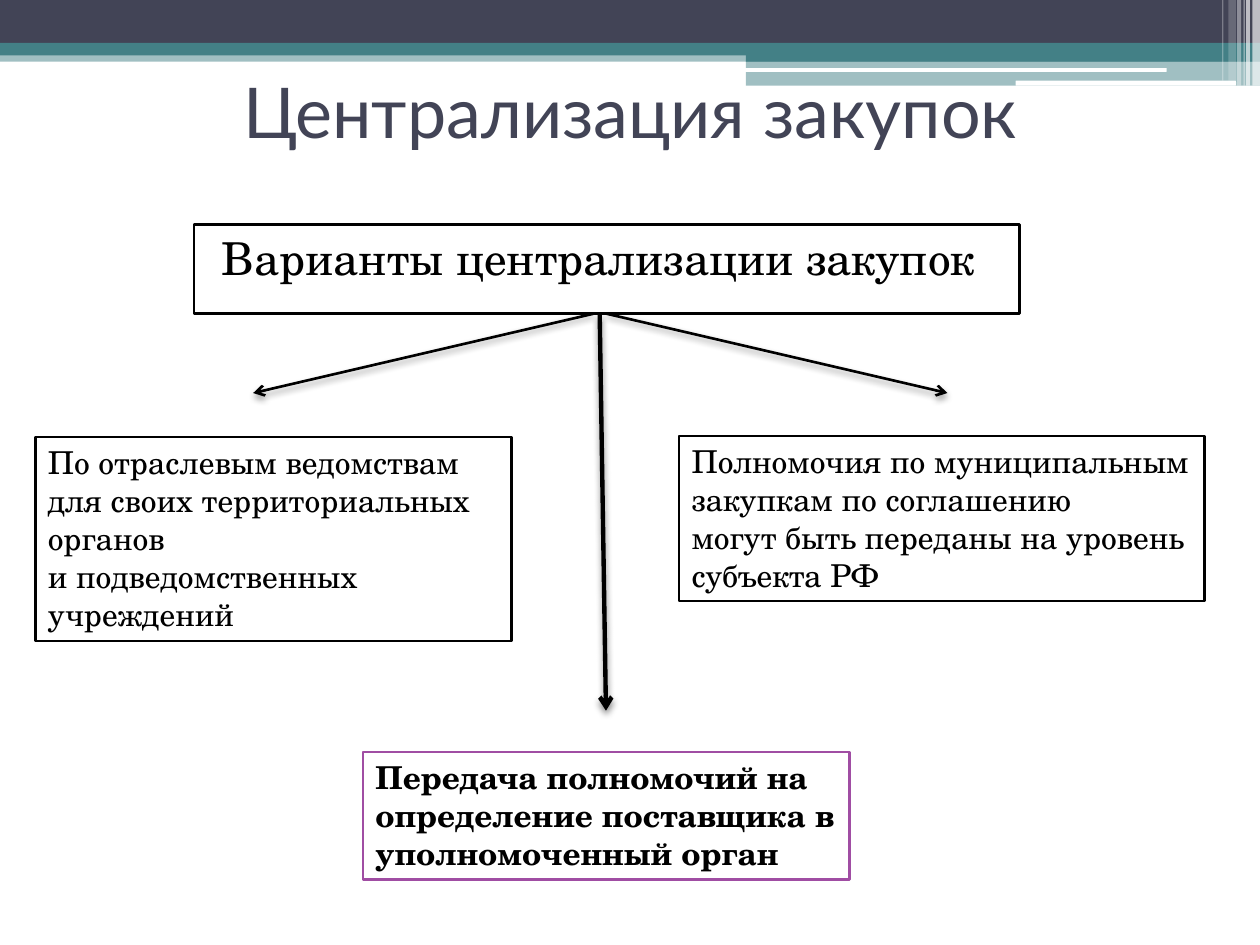
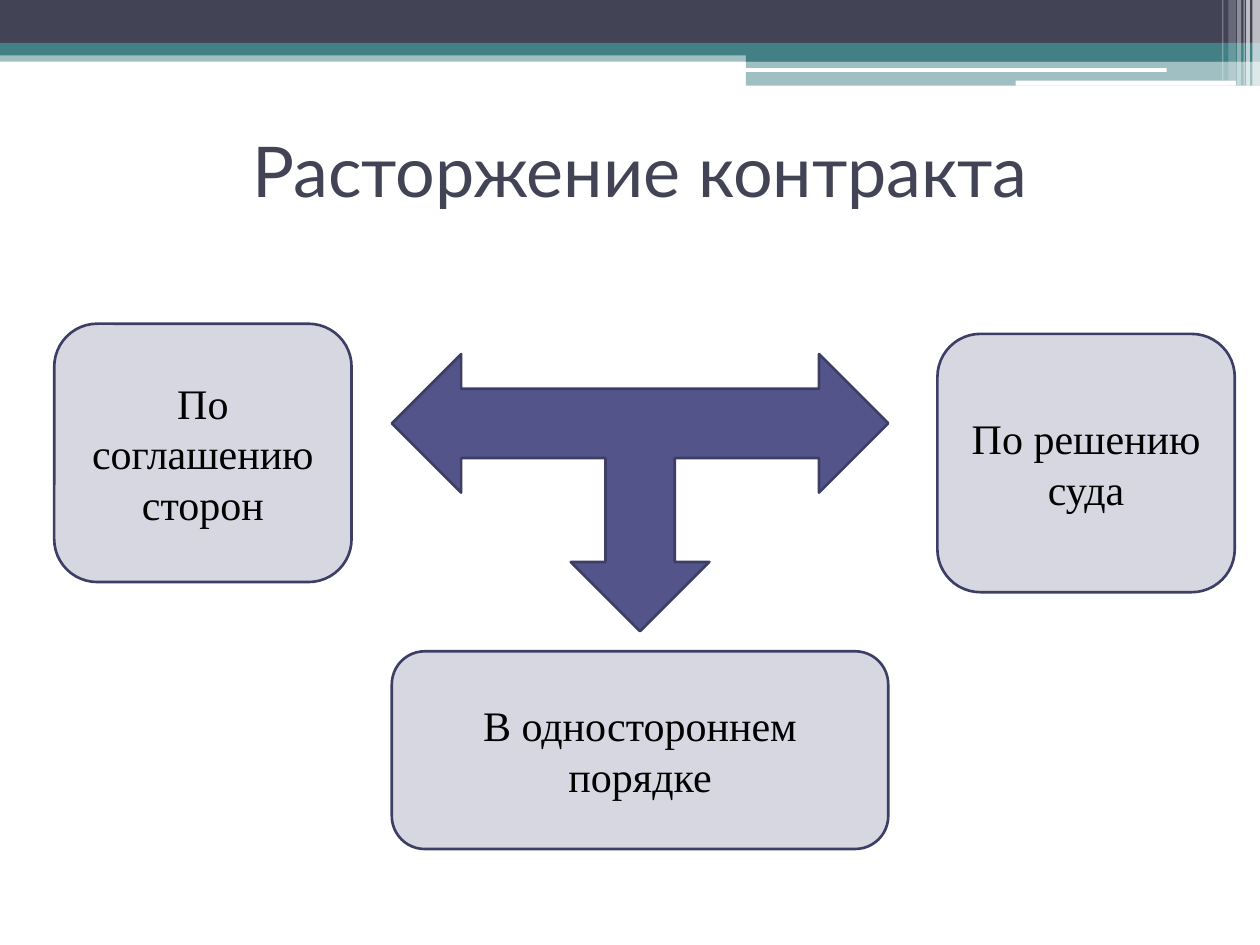
from dataclasses import dataclass

from lxml import etree
from pptx import Presentation
from pptx.dml.color import RGBColor
from pptx.enum.shapes import MSO_CONNECTOR, MSO_SHAPE
from pptx.enum.text import MSO_ANCHOR, PP_ALIGN
from pptx.oxml.ns import qn
from pptx.util import Pt

RECT, ROUND = MSO_SHAPE.RECTANGLE, MSO_SHAPE.ROUNDED_RECTANGLE
THREE_WAY_ARROW = MSO_SHAPE.LEFT_RIGHT_UP_ARROW
STRAIGHT = MSO_CONNECTOR.STRAIGHT
LEFT, CENTER = PP_ALIGN.LEFT, PP_ALIGN.CENTER
TOP, MIDDLE = MSO_ANCHOR.TOP, MSO_ANCHOR.MIDDLE

COLORS = {
    "navy": "424456", "teal": "438086", "white": "FFFFFF", "black": "000000",
    "purple": "A04DA3", "indigo": "53548A", "outline": "3D3E66", "pale": "D6D7E0",
}
PAGE_WIDTH, PAGE_HEIGHT = 720, 540
LINE_WIDTH = 1.5


@dataclass(frozen=True)
class TextStyle:
    font: str
    size: float
    color: str = "black"
    bold: bool = False
    align: PP_ALIGN = LEFT
    anchor: MSO_ANCHOR = TOP
    inset: float = 7.2
    space_before: float = 0


@dataclass(frozen=True)
class Band:
    left: float
    top: float
    width: float
    height: float
    color: str
    opacity: int = 100
    kind: MSO_SHAPE = RECT


@dataclass(frozen=True)
class Box:
    left: float
    top: float
    width: float
    height: float
    lines: tuple[str, ...]
    style: TextStyle
    outline: str = "black"
    fill: str = "white"
    kind: MSO_SHAPE = RECT


@dataclass(frozen=True)
class Arrow:
    start: tuple[float, float]
    end: tuple[float, float]
    width: float = LINE_WIDTH
    shadow_opacity: int = 40
    joined: bool = False


# Text styles
TITLE = TextStyle("Lato", 40, "navy", align=CENTER, anchor=MIDDLE)
HEADING = TextStyle("TeX Gyre Schola", 25.9, inset=15.8, space_before=3)
BODY = TextStyle("TeX Gyre Schola", 18)
STRONG = TextStyle("TeX Gyre Schola", 18, bold=True)
CARD = TextStyle("Times New Roman", 24, align=CENTER, anchor=MIDDLE)

# Header bands, then the white stripes in the right corner
STEP_LEFT = 426.2
STEP_WIDTH = PAGE_WIDTH - STEP_LEFT
STRIPES = [  # left, width, height, opacity
    (715.7, 4.3, 49, 65), (712.1, 2.2, 49, 65), (710.6, 0.7, 49, 60),
    (707, 2.2, 49, 40), (702, 4.3, 46.1, 20), (698.4, 0.7, 46.1, 30),
]
BANDS = [
    Band(0, 28.8, PAGE_WIDTH, 6.5, "teal", 50),
    Band(0, 0, PAGE_WIDTH, 24.5, "navy"),
    Band(0, 24.5, PAGE_WIDTH, 7.2, "teal"),
    Band(STEP_LEFT, 28.1, STEP_WIDTH, 7.2, "teal"),
    Band(STEP_LEFT, 34.6, STEP_WIDTH, 14.4, "teal", 50),
    Band(425.5, 38.9, 241.2, 2.2, "white", kind=ROUND),
    Band(580.3, 46.1, 126, 2.9, "white", kind=ROUND),
    *(Band(left, 0, width, height, "white", opacity)
      for left, width, height, opacity in STRIPES),
]

# Slide 1 content
VARIANTS = Box(110.9, 128.2, 471.6, 51.1, ("Варианты централизации закупок",), HEADING)
OPTIONS = [
    Box(20.2, 249.8, 272.2, 116.6, (
        "По отраслевым ведомствам",
        "для своих территориальных органов",
        "и подведомственных учреждений"), BODY),
    Box(388.1, 249.1, 300.2, 94.3, (
        "Полномочия по муниципальным",
        "закупкам по соглашению",
        "могут быть переданы на уровень",
        "субъекта РФ"), BODY),
    Box(207.4, 429.8, 277.9, 72.7, (
        "Передача полномочий на определение поставщика в уполномоченный орган",),
        STRONG, "purple"),
]
VARIANTS_BOTTOM = VARIANTS.top + VARIANTS.height
ARROWS = [
    Arrow((342.7, VARIANTS_BOTTOM), (346.3, 406.1), 2.5, 45),
    Arrow((339.1, VARIANTS_BOTTOM), (144.7, 224.6)),
    Arrow((346.7, VARIANTS_BOTTOM), (541.4, 224.6), joined=True),
]

# Slide 2 content
MIDDLE_LEFT, MIDDLE_WIDTH = 223.9, 283.7
CARD_WIDTH, CARD_HEIGHT = 169.9, 147.6
CARDS = [
    Box(*place, (text,), CARD, "outline", "pale", ROUND)
    for place, text in [
        ((31, 185, CARD_WIDTH, CARD_HEIGHT), "По соглашению сторон"),
        ((535.7, 190.8, CARD_WIDTH, CARD_HEIGHT), "По решению суда"),
        ((MIDDLE_LEFT, 372.2, MIDDLE_WIDTH, 113), "В одностороннем порядке"),
    ]
]


def rgb(name: str) -> RGBColor:
    return RGBColor.from_string(COLORS[name])


def add_figure(page, kind: MSO_SHAPE, left: float, top: float, width: float,
               height: float, fill: str, outline: str | None = None):
    shape = page.shapes.add_shape(kind, Pt(left), Pt(top), Pt(width), Pt(height))
    shape.shadow.inherit = False
    shape.fill.solid()
    shape.fill.fore_color.rgb = rgb(fill)
    if outline:
        shape.line.color.rgb = rgb(outline)
        shape.line.width = Pt(LINE_WIDTH)
    else:
        shape.line.fill.background()
    return shape


def write_text(shape, lines: tuple[str, ...], style: TextStyle) -> None:
    frame = shape.text_frame
    frame.word_wrap = True
    frame.vertical_anchor = style.anchor
    frame.margin_left = Pt(style.inset)
    for index, line in enumerate(lines):
        para = frame.add_paragraph() if index else frame.paragraphs[0]
        para.alignment = style.align
        para.space_before = Pt(style.space_before)
        span = para.add_run()
        span.text = line
        span.font.name = style.font
        span.font.size = Pt(style.size)
        span.font.bold = style.bold
        span.font.color.rgb = rgb(style.color)


def add_band(page, band: Band) -> None:
    shape = add_figure(page, band.kind, band.left, band.top, band.width,
                       band.height, band.color)
    if band.opacity < 100:
        color = shape.element.spPr.find(f"{qn('a:solidFill')}/{qn('a:srgbClr')}")
        etree.SubElement(color, qn("a:alpha"), val=str(band.opacity * 1000))


def add_box(page, box: Box):
    shape = add_figure(page, box.kind, box.left, box.top, box.width, box.height,
                       box.fill, box.outline)
    write_text(shape, box.lines, box.style)
    return shape


def add_arrow(page, arrow: Arrow, source) -> None:
    line = page.shapes.add_connector(
        STRAIGHT, *(Pt(value) for value in (*arrow.start, *arrow.end)))
    if arrow.joined:
        line.begin_connect(source, 2)
    line.line.color.rgb = rgb("black")
    line.line.width = Pt(arrow.width)
    properties = line.element.spPr
    etree.SubElement(properties.find(qn("a:ln")), qn("a:tailEnd"), type="arrow")
    # Soft shadow straight below the line
    effects = etree.SubElement(properties, qn("a:effectLst"))
    shadow = etree.SubElement(
        effects, qn("a:outerShdw"), blurRad=str(Pt(4)), dist=str(Pt(2)),
        dir="5400000", rotWithShape="0")
    color = etree.SubElement(shadow, qn("a:srgbClr"), val=COLORS["black"])
    etree.SubElement(color, qn("a:alpha"), val=str(arrow.shadow_opacity * 1000))


def add_page(deck, title: str, left: float, top: float):
    page = deck.slides.add_slide(deck.slide_layouts[6])
    for band in BANDS:
        add_band(page, band)
    box = page.shapes.add_textbox(Pt(left), Pt(top), Pt(648), Pt(84.2))
    write_text(box, (title,), TITLE)
    return page


def build_centralization(deck) -> None:
    page = add_page(deck, "Централизация закупок", 36, 20.9)
    variants = add_box(page, VARIANTS)
    for option in OPTIONS:
        add_box(page, option)
    for arrow in ARROWS:
        add_arrow(page, arrow, variants)


def build_termination(deck) -> None:
    page = add_page(deck, "Расторжение контракта", 41.8, 54.7)
    arrow = add_figure(page, THREE_WAY_ARROW, MIDDLE_LEFT, 202.3, MIDDLE_WIDTH,
                       158.4, "indigo", "outline")
    arrow.rotation = 180
    for card in CARDS:
        add_box(page, card)


def main() -> None:
    deck = Presentation()
    deck.slide_width, deck.slide_height = Pt(PAGE_WIDTH), Pt(PAGE_HEIGHT)
    build_centralization(deck)
    build_termination(deck)
    deck.save("out.pptx")


if __name__ == "__main__":
    main()
